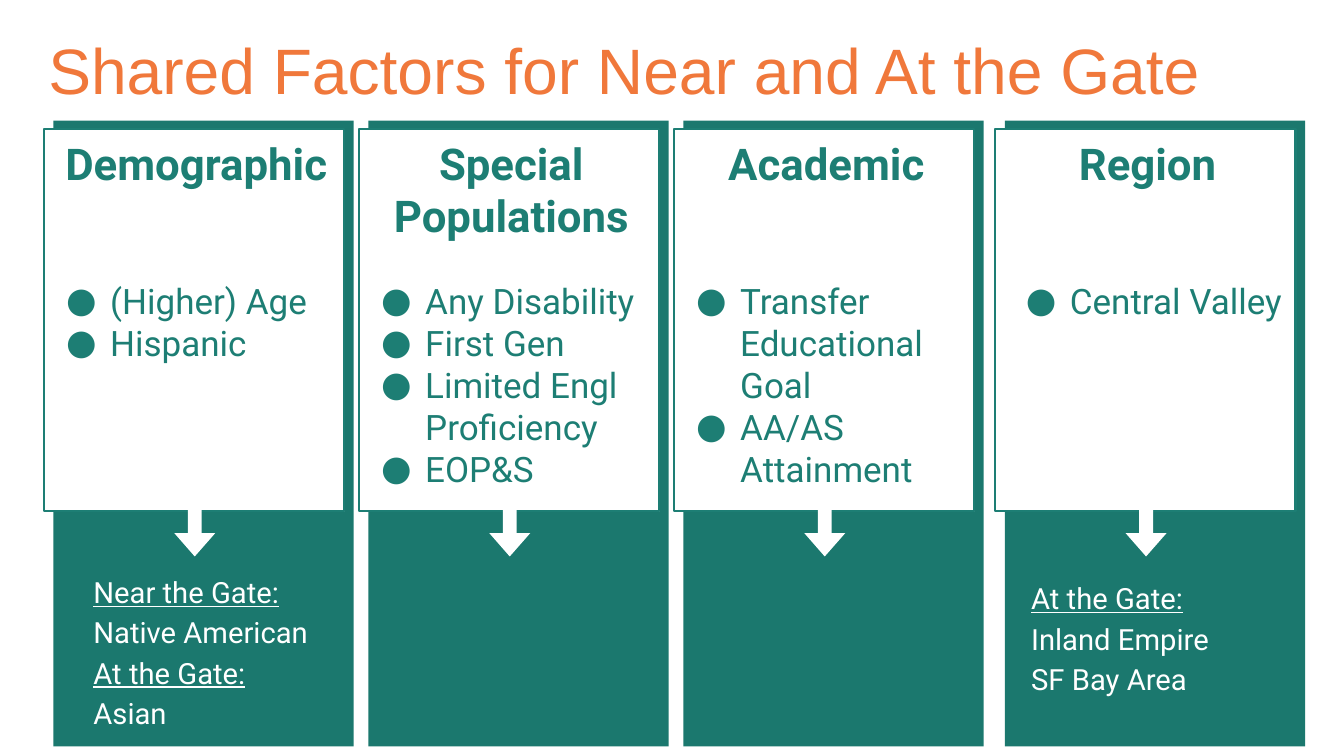
"""Build the slide of shared factors for the near and at the gate groups."""
from dataclasses import dataclass

from lxml import etree
from pptx import Presentation
from pptx.enum import shapes, text
from pptx.oxml import ns
from pptx.util import Inches, Pt
from pptx.dml.color import RGBColor

INK = {"title": "F0783B", "panel": "1B786E", "text": "1D7E74", "white": "FFFFFF"}
WIDE = 2.86


@dataclass
class Note:
    """A white note with its place and lines."""
    left: float
    top: float
    lines: list[str]


@dataclass
class Column:
    """One column of factors."""
    left: float
    head: str
    items: list[str]
    shift: float = 0
    note: Note | None = None


COLUMNS = [
    Column(0.42, "Demographic", ["(Higher) Age", "Hispanic"],
           note=Note(0.76, 5.29, ["Near the Gate:", "Native American", "At the Gate:", "Asian"])),
    Column(3.42, "Special Populations",
           ["Any Disability", "First Gen", "Limited Engl Proficiency", "EOP&S"]),
    Column(6.42, "Academic", ["Transfer Educational Goal", "AA/AS Attainment"]),
    Column(9.48, "Region", ["Central Valley"], shift=0.08,
           note=Note(9.69, 5.35, ["At the Gate:", "Inland Empire", "SF Bay Area"])),
]


def color(name: str) -> RGBColor:
    """Return a named colour."""
    return RGBColor.from_string(INK[name])


def style(para, size: float, ink: str, face: str = "Roboto", bold: bool = False) -> None:
    """Format the runs of a paragraph."""
    for run in para.runs:
        run.font.size, run.font.name, run.font.bold = Pt(size), face, bold
        run.font.color.rgb = color(ink)


def bullet(para) -> None:
    """Give a paragraph a round bullet and a hanging indent."""
    props = para._p.get_or_add_pPr()
    props.set("marL", str(Inches(0.5)))
    props.set("indent", str(Inches(-0.42)))
    tint = etree.SubElement(props, ns.qn("a:buClr"))
    etree.SubElement(tint, ns.qn("a:srgbClr"), val=INK["text"])
    etree.SubElement(props, ns.qn("a:buFont"), typeface="Roboto")
    etree.SubElement(props, ns.qn("a:buChar"), char="●")


def add_box(slide, left: float, top: float, width: float, height: float, lines: list[str]):
    """Add a text box and return its paragraphs."""
    box = slide.shapes.add_textbox(*map(Inches, (left, top, width, height)))
    frame = box.text_frame
    frame.word_wrap = True
    frame.margin_left = frame.margin_right = Inches(0.13)
    frame.margin_top = frame.margin_bottom = Inches(0.13)
    frame.text = "\n".join(lines)
    return frame.paragraphs


def add_form(slide, kind, left: float, top: float, width: float, height: float, fill: str):
    """Add a filled shape without an outline."""
    form = slide.shapes.add_shape(kind, *map(Inches, (left, top, width, height)))
    form.shadow.inherit = False
    form.fill.solid()
    form.fill.fore_color.rgb = color(fill)
    form.line.fill.background()
    return form


def add_note(slide, note: Note) -> None:
    """Add a note with its gate labels underlined."""
    for para in add_box(slide, note.left, note.top, 2.52, 1.59, note.lines):
        para.line_spacing = 1.15
        style(para, 20, "white")
        para.runs[0].font.underline = para.text.endswith(":")


def add_column(slide, col: Column) -> None:
    """Draw a panel, its card, texts and arrow."""
    rect = shapes.MSO_SHAPE.RECTANGLE
    add_form(slide, rect, col.left + 0.09, 1.15, WIDE, 5.96, "panel")
    card = add_form(slide, rect, col.left, 1.23, WIDE, 3.64, "white")
    card.line.color.rgb = color("text")
    card.line.width = Pt(1.5)
    for para in add_box(slide, col.left + col.shift, 2.53, WIDE, 0.89, col.items):
        bullet(para)
        style(para, 24, "text")
    for para in add_box(slide, col.left + 0.02, 1.17, WIDE, 0.99, [col.head]):
        para.alignment = text.PP_ALIGN.CENTER
        style(para, 30, "text", bold=True)
    arrow = add_form(slide, shapes.MSO_SHAPE.DOWN_ARROW, col.left + 1.24, 4.73, 0.39, 0.57, "white")
    arrow.adjustments[0], arrow.adjustments[1] = 0.34, 0.57
    if col.note:
        add_note(slide, col.note)


def add_title(slide, words: str) -> None:
    """Place and format the title."""
    title = slide.shapes.title
    title.left, title.top, title.width, title.height = map(Inches, (0.36, 0.13, 12.01, 1.06))
    frame = title.text_frame
    frame.text = words
    frame.auto_size = text.MSO_AUTO_SIZE.NONE
    frame.vertical_anchor = text.MSO_ANCHOR.MIDDLE
    frame.margin_left = frame.margin_right = Inches(0.1)
    frame.margin_top = frame.margin_bottom = Inches(0.1)
    para = frame.paragraphs[0]
    para.alignment = text.PP_ALIGN.LEFT
    style(para, 44, "title", "Arial")


def main() -> None:
    """Build and save the slide."""
    deck = Presentation()
    deck.slide_width, deck.slide_height = Inches(12.8), Inches(7.2)
    slide = deck.slides.add_slide(deck.slide_layouts[5])
    add_title(slide, "Shared Factors for Near and At the Gate")
    for col in COLUMNS:
        add_column(slide, col)
    deck.save("out.pptx")


if __name__ == "__main__":
    main()
